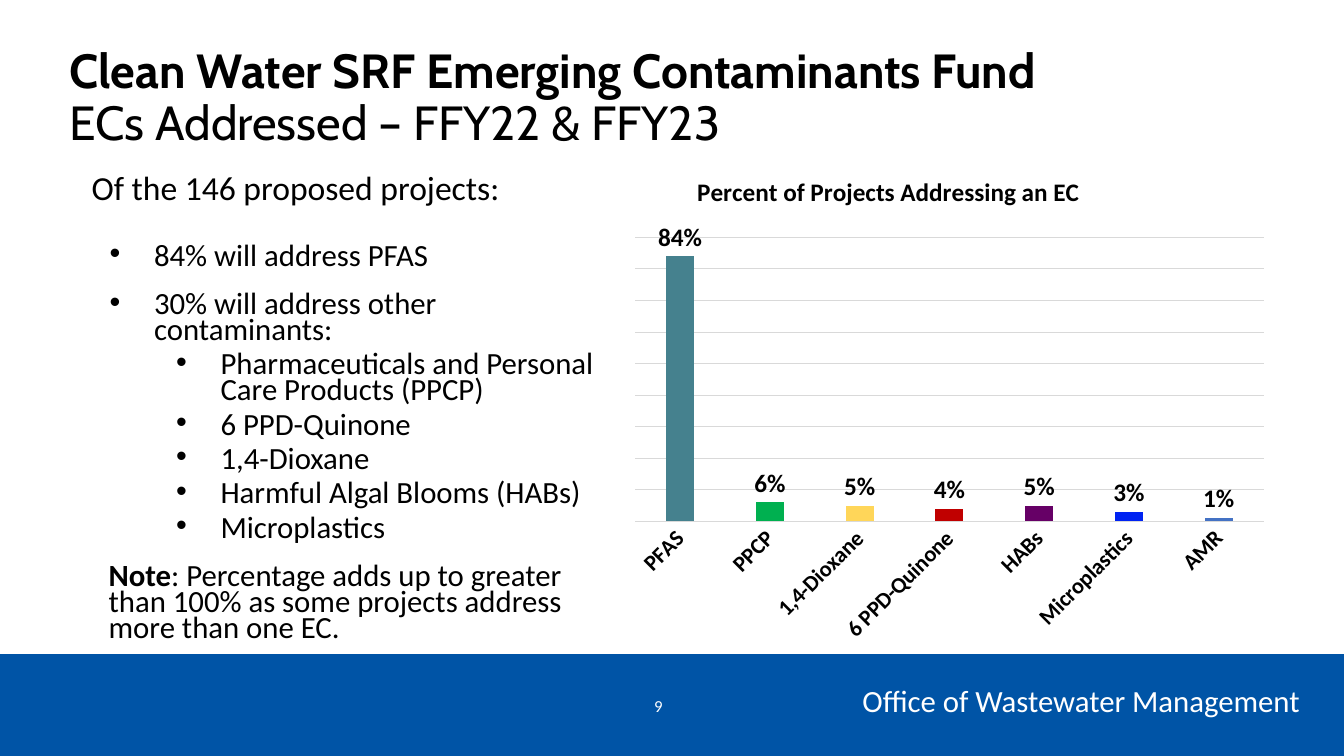
from lxml import etree
from pptx import Presentation
from pptx.chart.data import CategoryChartData
from pptx.dml.color import RGBColor
from pptx.enum.chart import XL_CHART_TYPE, XL_LABEL_POSITION, XL_TICK_MARK
from pptx.enum.shapes import MSO_SHAPE
from pptx.enum.text import MSO_ANCHOR, PP_ALIGN
from pptx.oxml import parse_xml
from pptx.oxml.ns import nsdecls, qn
from pptx.util import Inches, Pt

COLUMN = XL_CHART_TYPE.COLUMN_CLUSTERED
OUTSIDE = XL_LABEL_POSITION.OUTSIDE_END
NO_TICK = XL_TICK_MARK.NONE
RECT = MSO_SHAPE.RECTANGLE
TOP, MIDDLE = MSO_ANCHOR.TOP, MSO_ANCHOR.MIDDLE
LEFT, RIGHT = PP_ALIGN.LEFT, PP_ALIGN.RIGHT

BLACK, WHITE, BLUE, GRAY = "000000", "FFFFFF", "0054A6", "D9D9D9"

# Text, level: 0 is a bullet, 1 a sub-bullet
POINTS = [
    ("84% will address PFAS", 0),
    ("30% will address other contaminants:", 0),
    ("Pharmaceuticals and Personal Care Products (PPCP)", 1),
    ("6 PPD-Quinone", 1),
    ("1,4-Dioxane", 1),
    ("Harmful Algal Blooms (HABs)", 1),
    ("Microplastics", 1),
]
NOTE = ": Percentage adds up to greater than 100% as some projects address more than one EC."

# Contaminant, share of projects, bar colour
SHARES = [
    ("PFAS", 0.84, "45818E"),
    ("PPCP", 0.06, "00B050"),
    ("1,4-Dioxane", 0.05, "FFD659"),
    ("6 PPD-Quinone", 0.04, "C00000"),
    ("HABs", 0.05, "660066"),
    ("Microplastics", 0.03, "0023F2"),
    ("AMR", 0.01, "4472C4"),
]


def color(code):
    return RGBColor.from_string(code)


def style(font, size, code=BLACK, bold=False, name="Calibri"):
    font.name, font.size, font.bold = name, Pt(size), bold
    font.color.rgb = color(code)


def frame(slide, x, y, w, h, anchor=TOP):
    box = slide.shapes.add_textbox(Inches(x), Inches(y), Inches(w), Inches(h))
    box.text_frame.word_wrap = True
    box.text_frame.vertical_anchor = anchor
    return box.text_frame


def label(slide, x, y, w, h, text, size, code=BLACK, align=LEFT, anchor=TOP):
    para = frame(slide, x, y, w, h, anchor).paragraphs[0]
    para.text, para.alignment = text, align
    style(para.runs[0].font, size, code)


def indent(para, left, first=0, bullet=None):
    props = para._p.get_or_add_pPr()
    props.set("marL", str(Inches(left)))
    props.set("indent", str(Inches(first)))
    if bullet:
        face = etree.SubElement(props, qn("a:buFont"))
        face.set("typeface", "Arial")
        etree.SubElement(props, qn("a:buChar")).set("char", bullet)


def footer(slide, x, y, w, h):
    band = slide.shapes.add_shape(RECT, Inches(x), Inches(y), Inches(w), Inches(h))
    band.shadow.inherit = False
    band.fill.solid()
    band.fill.fore_color.rgb = color(BLUE)
    band.line.fill.background()
    label(slide, x + 5.99, y + 0.31, 0.68, 0.4, "9", 12, WHITE, RIGHT, MIDDLE)
    label(slide, x + 7.32, y + 0.22, 5.67, 0.47,
          "Office of Wastewater Management", 22, WHITE, RIGHT)


def title(slide, x, y, w, h):
    text = frame(slide, x, y, w, h, MIDDLE)
    text.text = "Clean Water SRF Emerging Contaminants Fund\nECs Addressed – FFY22 & FFY23"
    for para, bold in zip(text.paragraphs, (True, False)):
        para.line_spacing = 0.9
        style(para.runs[0].font, 34.2, bold=bold, name="Cabin")


def body(slide, x, y, w, h):
    text = frame(slide, x, y, w, h)
    for i, (words, level) in enumerate(POINTS):
        para = text.paragraphs[0] if i == 0 else text.add_paragraph()
        para.text, para.level = words, level
        para.line_spacing, para.space_after = 0.7, Pt(6)
        para.space_before = Pt(10 if i and level == 0 else 0)
        indent(para, 0.67 + 0.66 * level, -0.44, "•")
        style(para.runs[0].font, 22)

    # Closing note
    para = text.add_paragraph()
    para.line_spacing, para.space_before = 0.7, Pt(10)
    indent(para, 0.22)
    for words, bold in (("Note", True), (NOTE, False)):
        run = para.add_run()
        run.text = words
        style(run.font, 22, bold=bold)


def layout(x, y, w=None, h=None):
    inner = '<c:layoutTarget val="inner"/>' if w else ""
    parts = [("xMode", "edge"), ("yMode", "edge"), ("x", x), ("y", y)]
    if w:
        parts += [("w", w), ("h", h)]
    tags = "".join(f'<c:{tag} val="{val}"/>' for tag, val in parts)
    return parse_xml(f'<c:layout {nsdecls("c")}><c:manualLayout>{inner}{tags}'
                     '</c:manualLayout></c:layout>')


def place(parent, node, after=None):
    for old in parent.findall(qn("c:layout")):
        parent.remove(old)
    if after is None:
        parent.insert(0, node)
    else:
        after.addnext(node)


def shares(slide, x, y, w, h):
    data = CategoryChartData(number_format="0%")
    data.categories = [name for name, _, _ in SHARES]
    data.add_series("Series 1", [val for _, val, _ in SHARES])
    chart = slide.shapes.add_chart(
        COLUMN, Inches(x), Inches(y), Inches(w), Inches(h), data).chart
    chart.has_legend = False
    style(chart.font, 10)

    # Heading and plot area
    head = chart.chart_title
    head.text_frame.text = "Percent of Projects Addressing an EC"
    style(head.text_frame.paragraphs[0].runs[0].font, 18, bold=True)
    place(head._element, layout(0.11, 0.02), head._element.find(qn("c:tx")))
    root = chart._chartSpace
    place(root.chart.plotArea, layout(0.023, 0.151, 0.953, 0.548))
    root.chart.addnext(parse_xml(
        f'<c:spPr {nsdecls("c", "a")}><a:noFill/><a:ln><a:noFill/></a:ln></c:spPr>'))

    # Axes
    cats, vals = chart.category_axis, chart.value_axis
    cats.major_tick_mark = cats.minor_tick_mark = NO_TICK
    style(cats.tick_labels.font, 16, bold=True)
    cats._element.find(qn("c:txPr")).find(qn("a:bodyPr")).set("rot", "-2700000")
    vals.minimum_scale, vals.maximum_scale, vals.major_unit = 0, 0.9, 0.1
    vals.has_major_gridlines = True
    for line in (cats.format.line, vals.major_gridlines.format.line):
        line.color.rgb, line.width = color(GRAY), Pt(0.75)
    vals.visible = False

    # Bars and their labels
    plot = chart.plots[0]
    plot.gap_width, plot.vary_by_categories = 219, False
    bars = plot.series[0]
    for i, (_, _, code) in enumerate(SHARES):
        fill = bars.points[i].format.fill
        fill.solid()
        fill.fore_color.rgb = color(code)
    tags = bars.data_labels
    tags.show_value, tags.position = True, OUTSIDE
    tags.number_format, tags.number_format_is_linked = "0%", False
    style(tags.font, 18, bold=True)


def main():
    deck = Presentation()
    deck.slide_width, deck.slide_height = Inches(13.33), Inches(7.5)
    slide = deck.slides.add_slide(deck.slide_layouts[6])
    footer(slide, 0, 6.49, 13.33, 1.01)
    title(slide, 0.59, 0.26, 12.15, 1.45)
    label(slide, 0.81, 1.61, 6.25, 0.5, "Of the 146 proposed projects:", 24)
    body(slide, 0.76, 2.39, 5.4, 4.07)
    shares(slide, 6.15, 1.58, 6.54, 5.14)
    deck.save("out.pptx")


if __name__ == "__main__":
    main()
